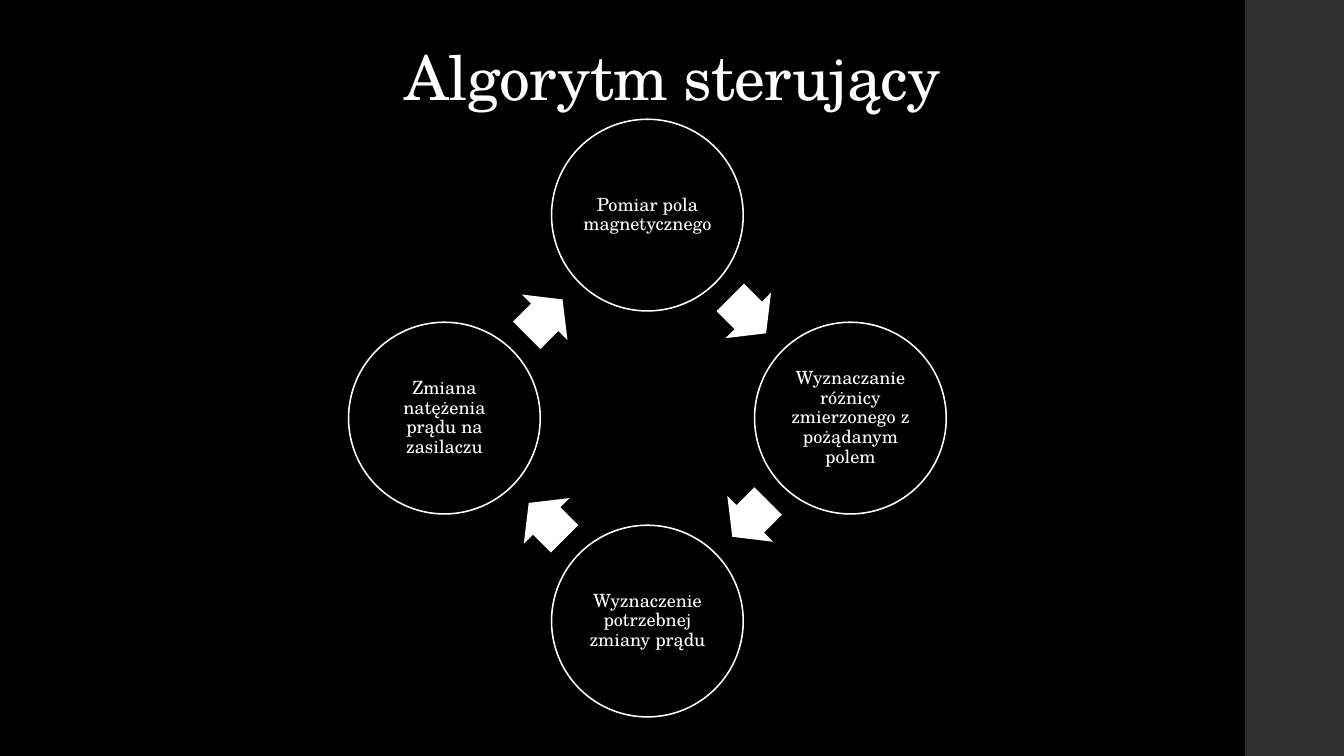
from math import cos, radians, sin

from pptx import Presentation
from pptx.dml.color import RGBColor
from pptx.enum.shapes import MSO_SHAPE
from pptx.enum.text import MSO_ANCHOR, PP_ALIGN
from pptx.util import Pt

FONT = "TeX Gyre Schola"
BLACK, WHITE, GREY = "000000", "FFFFFF", "303030"
STEPS = [
    "Pomiar pola magnetycznego",
    "Wyznaczanie różnicy zmierzonego z pożądanym polem",
    "Wyznaczenie potrzebnej zmiany prądu",
    "Zmiana natężenia prądu na zasilaczu",
]


def color(hex_string):
    return RGBColor.from_string(hex_string)


def add_filled(shapes, kind, left, top, width, height, fill, line=None):
    shape = shapes.add_shape(kind, Pt(left), Pt(top), Pt(width), Pt(height))
    shape.shadow.inherit = False
    shape.fill.solid()
    shape.fill.fore_color.rgb = color(fill)
    if line:
        shape.line.color.rgb = color(line)
        shape.line.width = Pt(1.1)
    else:
        shape.line.fill.background()
    return shape


def set_text(shape, text, size, anchor):
    frame = shape.text_frame
    frame.word_wrap = True
    frame.vertical_anchor = anchor
    frame.text = text
    paragraph = frame.paragraphs[0]
    paragraph.alignment = PP_ALIGN.CENTER
    paragraph.line_spacing = 0.9
    font = paragraph.runs[0].font
    font.name = FONT
    font.size = Pt(size)
    font.color.rgb = color(WHITE)
    return frame


def add_title(slide, text, left, top, width, height):
    box = slide.shapes.add_textbox(Pt(left), Pt(top), Pt(width), Pt(height))
    frame = set_text(box, text, 44, MSO_ANCHOR.BOTTOM)
    # Tighten letter spacing by half a point
    frame.paragraphs[0].runs[0].font._element.set("spc", "-50")


def add_cycle(slide, steps, left, top, size):
    """Circles on a ring inside a square box, with an arrow after each."""
    shapes = slide.shapes.add_group_shape().shapes
    diameter = 136.9
    orbit = (size - diameter) / 2
    arrow_orbit, arrow_lag = 102.8, 1
    arrow_width, arrow_height = 36.2, 46.2
    center_x, center_y = left + size / 2, top + size / 2
    turn = 360 / len(steps)

    for index, step in enumerate(steps):
        # Step circle, clockwise from the top
        angle = radians(index * turn - 90)
        x = center_x + orbit * cos(angle)
        y = center_y + orbit * sin(angle)
        circle = add_filled(shapes, MSO_SHAPE.OVAL, x - diameter / 2,
                            y - diameter / 2, diameter, diameter, BLACK, WHITE)
        frame = set_text(circle, step, 13, MSO_ANCHOR.MIDDLE)
        frame.margin_left = frame.margin_right = Pt(1.3)
        frame.margin_top = frame.margin_bottom = Pt(1.3)

        # Arrow halfway to the next step, pointing along the ring
        heading = (index + 0.5) * turn
        angle = radians(heading - 90)
        x = center_x + arrow_orbit * cos(angle) + arrow_lag * sin(angle)
        y = center_y + arrow_orbit * sin(angle) - arrow_lag * cos(angle)
        arrow = add_filled(shapes, MSO_SHAPE.RIGHT_ARROW, x - arrow_width / 2,
                           y - arrow_height / 2, arrow_width, arrow_height, WHITE)
        arrow.adjustments[0] = 0.6
        arrow.adjustments[1] = 0.5
        arrow.rotation = heading


def main():
    presentation = Presentation()
    presentation.slide_width = Pt(960)
    presentation.slide_height = Pt(540)
    slide = presentation.slides.add_slide(presentation.slide_layouts[6])
    slide.background.fill.solid()
    slide.background.fill.fore_color.rgb = color(BLACK)

    # Side band
    add_filled(slide.shapes, MSO_SHAPE.RECTANGLE, 889.2, 0, 70.8, 540, GREY)
    add_title(slide, "Algorytm sterujący", 99, 29, 763, 56)
    add_cycle(slide, STEPS, 249, 85.2, 426.9)
    presentation.save("out.pptx")


if __name__ == "__main__":
    main()
